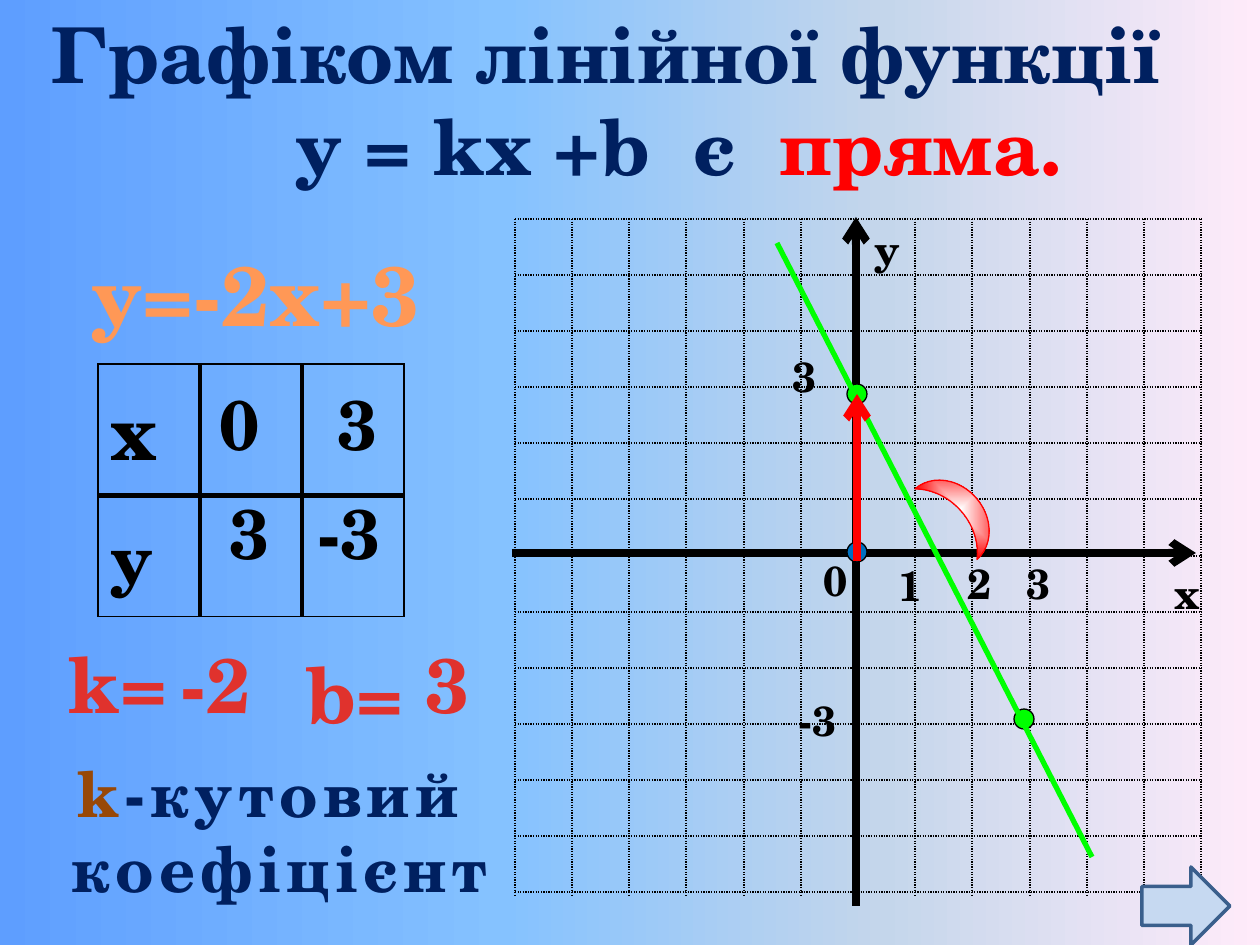
from dataclasses import dataclass

from lxml import etree
from pptx import Presentation
from pptx.dml.color import RGBColor
from pptx.enum.dml import MSO_LINE
from pptx.enum.shapes import MSO_CONNECTOR, MSO_SHAPE
from pptx.enum.text import MSO_ANCHOR, MSO_AUTO_SIZE, PP_ALIGN
from pptx.oxml.ns import qn
from pptx.util import Pt

LEFT, MID = PP_ALIGN.LEFT, PP_ALIGN.CENTER
TOP = MSO_ANCHOR.TOP
FIXED = MSO_AUTO_SIZE.NONE
LINE = MSO_CONNECTOR.STRAIGHT
DOTS = MSO_LINE.ROUND_DOT
OVAL, MOON, NEXT = MSO_SHAPE.OVAL, MSO_SHAPE.MOON, MSO_SHAPE.RIGHT_ARROW
SCALE = 914400 / 126


@dataclass(frozen=True)
class Theme:
    face: str = "TeX Gyre Schola"
    ink: str = "000000"
    navy: str = "002060"
    red: str = "FF0000"
    brick: str = "E0322D"
    amber: str = "FF9856"
    brown: str = "984807"
    green: str = "00FF00"
    blue: str = "0070C0"
    pale: str = "C6D9F1"
    steel: str = "3A5F8C"
    sky: tuple = ((0, "5E9EFF"), (40, "85C2FF"), (70, "C4D6EB"), (100, "FFEBFA"))
    glow: tuple = ((0, "FFFFFF"), (100, "FF0000"))
    label: int = 24
    note: int = 36
    value: int = 40
    head: int = 44
    rule: int = 48


def px(*nums):
    return [round(n * SCALE) for n in nums]


def rgb(code):
    return RGBColor.from_string(code)


def blend(parent, stops, center=False):
    grad = etree.Element(qn("a:gradFill"), rotWithShape="1")
    items = etree.SubElement(grad, qn("a:gsLst"))
    for pos, code in stops:
        stop = etree.SubElement(items, qn("a:gs"), pos=str(pos * 1000))
        etree.SubElement(stop, qn("a:srgbClr"), val=code)
    if center:
        way = etree.SubElement(grad, qn("a:path"), path="rect")
        etree.SubElement(way, qn("a:fillToRect"), l="50000", t="50000", r="50000", b="50000")
    else:
        etree.SubElement(grad, qn("a:lin"), ang="0", scaled="0")
    parent.replace(parent.find(qn("a:solidFill")), grad)


class Board:
    def __init__(self, slide, theme):
        self.slide, self.theme = slide, theme

    def back(self, stops):
        self.slide.background.fill.solid()
        blend(self.slide._element.find(".//" + qn("p:bgPr")), stops)

    def font(self, para, size, color):
        font = para.font
        font.name, font.size, font.bold = self.theme.face, Pt(size), True
        font.color.rgb = rgb(color)

    def fill(self, frame, lines, size, color, align=LEFT, gap=0, wrap=True):
        frame.word_wrap, frame.auto_size = wrap, FIXED
        frame.vertical_anchor = TOP
        for i, (indent, parts) in enumerate(lines):
            para = frame.add_paragraph() if i else frame.paragraphs[0]
            para.alignment, para.line_spacing = align, 1.0
            self.font(para, size, color)
            if indent:
                para._p.get_or_add_pPr().set("marL", str(px(indent)[0]))
            for text, tint, space in parts:
                run = para.add_run()
                run.text = text
                if tint:
                    run.font.color.rgb = rgb(tint)
                if space or gap:
                    run._r.get_or_add_rPr().set("spc", str(round((space or gap) * 100)))

    def title(self, box, lines, size, color):
        shape = self.slide.shapes.title
        shape.left, shape.top, shape.width, shape.height = px(*box)
        self.fill(shape.text_frame, lines, size, color)

    def text(self, box, lines, size, color, **style):
        if isinstance(lines, str):
            lines = [(0, [(lines, None, 0)])]
        shape = self.slide.shapes.add_textbox(*px(*box))
        self.fill(shape.text_frame, lines, size, color, **style)

    def line(self, ends, color, width, dots=False, arrow=False):
        link = self.slide.shapes.add_connector(LINE, *px(*ends))
        link.line.color.rgb, link.line.width = rgb(color), Pt(width)
        if dots:
            link.line.dash_style = DOTS
        if arrow:
            etree.SubElement(link.line._get_or_add_ln(), qn("a:tailEnd"), type="arrow")
        etree.SubElement(link._element.spPr, qn("a:effectLst"))

    def shape(self, kind, box, color, edge, width=0.75, turn=0):
        item = self.slide.shapes.add_shape(kind, *px(*box))
        item.shadow.inherit = False
        item.rotation = turn
        item.fill.solid()
        item.fill.fore_color.rgb = rgb(color)
        item.line.color.rgb, item.line.width = rgb(edge), Pt(width)
        return item

    def border(self, cell, sides):
        props = cell._tc.get_or_add_tcPr()
        for i, (side, width) in enumerate(sides):
            edge = etree.Element(qn("a:ln" + side), w=str(Pt(width)))
            paint = etree.SubElement(edge, qn("a:solidFill"))
            etree.SubElement(paint, qn("a:srgbClr"), val=self.theme.ink)
            props.insert(i, edge)

    def table(self, box, rows, cols, heads):
        table = self.slide.shapes.add_table(rows, cols, *px(*box)).table
        table.first_row = table.horz_banding = False
        for r in range(rows):
            for c in range(cols):
                cell = table.cell(r, c)
                cell.fill.background()
                outer = (("L", c == 0), ("R", c == cols - 1), ("T", r == 0), ("B", r == rows - 1))
                self.border(cell, [(side, 1 if edge else 3) for side, edge in outer])
        for r, (text, size) in enumerate(heads):
            para = table.cell(r, 0).text_frame.paragraphs[0]
            para.text = text
            self.font(para, size, self.theme.ink)


def main():
    deck = Presentation()
    deck.slide_width, deck.slide_height = px(1260, 945)
    t = Theme()
    board = Board(deck.slides.add_slide(deck.slide_layouts[5]), t)
    board.back(t.sky)

    left, top, right, low, count = 515, 219, 1201, 892, 12
    for i in range(count + 1):
        x = round(left + i * (right - left) / count)
        y = round(top + i * (low - top) / count)
        board.line((x, top, x, low + 4), t.ink, 0.75, dots=True)
        board.line((left, y, right + 2, y), t.ink, 0.75, dots=True)
    board.line((856, 906, 856, 217), t.ink, 4.5, arrow=True)
    board.line((512, 553, 1196, 553), t.ink, 4.5, arrow=True)

    labels = (
        (811, 548, 49, "0"), (886, 553, 49, "1"), (862, 217, 49, "у"), (1162, 561, 49, "х"),
        (780, 344, 69, "3"), (955, 551, 82, "2"), (786, 688, 100, "-3"), (1014, 551, 69, "3"),
    )
    for x, y, wide, text in labels:
        board.text((x, y, wide, 64), text, t.label, t.ink)

    board.title((39, 0, 1191, 199), [
        (0, [("Графіком лінійної функції", None, 0)]),
        (244, [("y = kх +b", None, 0), (" ", None, 12), ("є", None, 0),
               (" ", None, 12), ("пряма.", t.red, 0)]),
    ], t.head, t.navy)
    board.text((39, 236, 433, 115), "y=-2x+3", t.rule, t.amber, align=MID)

    board.table((98, 364, 306, 226), 2, 3, (("x", t.head), ("y", t.value)))

    for x, y in ((847, 384), (1014, 709)):
        board.shape(OVAL, (x, y, 20, 20), t.green, t.ink)
    board.line((1092, 857, 777, 243), t.green, 3)
    moon = board.shape(MOON, (941, 464, 40, 94), t.red, t.red, turn=138.7)
    blend(moon._element.spPr, t.glow, center=True)

    values = ((207, 374, 74, "0"), (217, 483, 69, "3"), (325, 374, 69, "3"), (305, 483, 96, "-3"))
    for x, y, wide, text in values:
        board.text((x, y, wide, 97), text, t.value, t.ink)

    board.shape(OVAL, (847, 542, 20, 20), t.blue, t.ink)
    board.line((857, 561, 857, 394), t.red, 4.5, arrow=True)

    terms = (
        (39, 630, 158, "k=", MID), (266, 640, 178, "b=", MID),
        (168, 630, 106, "-2", LEFT), (413, 630, 79, "3", LEFT),
    )
    for x, y, wide, text, align in terms:
        board.text((x, y, wide, 106), text, t.head, t.brick, align=align, gap=0.5)
    board.text((29, 748, 478, 165), [
        (0, [("k", t.brown, 0), ("-кутовий", None, 0)]),
        (23, [("коефіцієнт", None, 0)]),
    ], t.note, t.navy, align=MID, gap=3, wrap=False)

    board.shape(NEXT, (1142, 867, 88, 78), t.pale, t.steel, width=2)
    deck.save("out.pptx")


if __name__ == "__main__":
    main()
